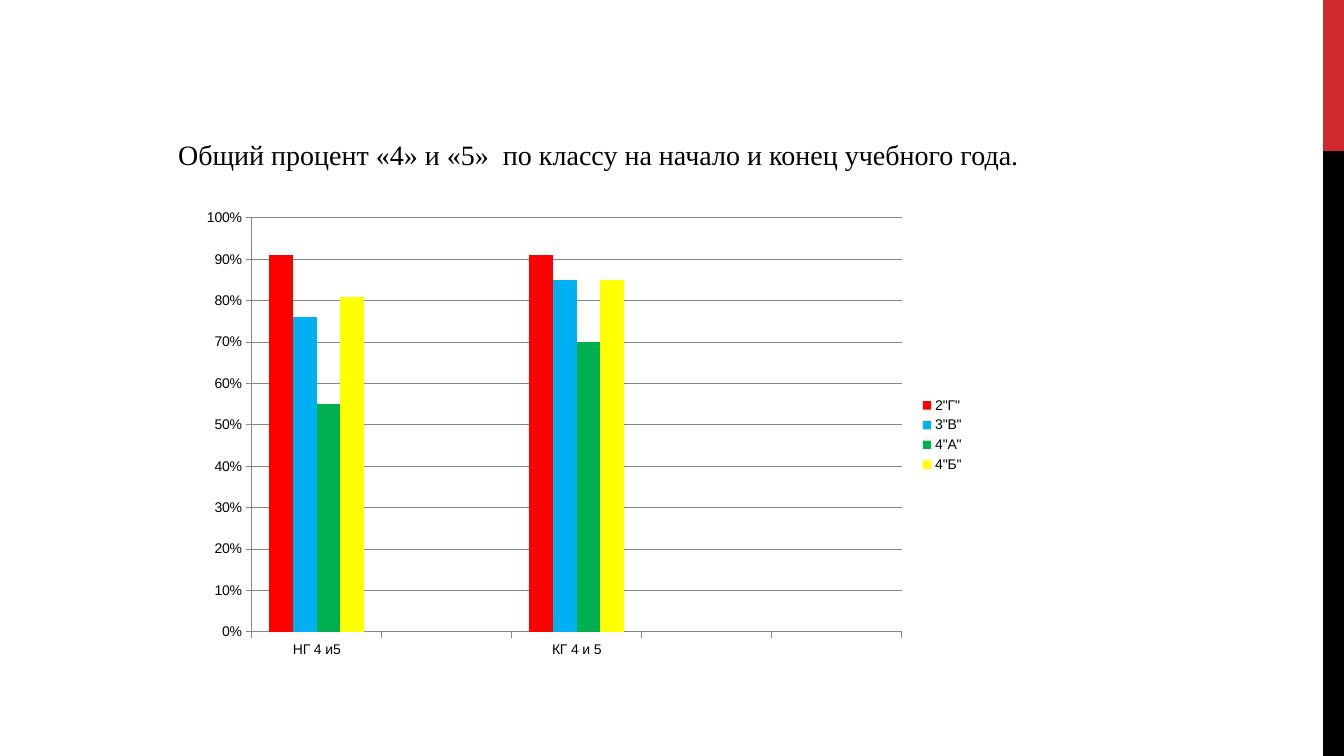
from lxml.etree import SubElement
from pptx import Presentation
from pptx.chart.data import CategoryChartData
from pptx.dml.color import RGBColor
from pptx.enum.chart import XL_CHART_TYPE as ChartType, XL_LEGEND_POSITION as LegendSide
from pptx.enum.chart import XL_TICK_MARK as Tick
from pptx.enum.shapes import MSO_SHAPE as Preset
from pptx.enum.text import MSO_ANCHOR as Anchor, MSO_AUTO_SIZE as AutoSize, PP_ALIGN as Align
from pptx.oxml.ns import qn
from pptx.util import Pt

# Content
HEADING = "Общий процент «4» и «5»  по классу на начало и конец учебного года."
PERIODS = ["НГ 4 и5", "", "КГ 4 и 5", "", ""]
CLASSES = [  # name, shares per period, colour
    ('2"Г"', (0.91, None, 0.91, None, None), "FF0000"),
    ('3"В"', (0.76, None, 0.85, None, None), "00B0F0"),
    ('4"А"', (0.55, None, 0.70, None, None), "00B050"),
    ('4"Б"', (0.81, None, 0.85, None, None), "FFFF00"),
]

THEME = {
    "ink": "000000", "accent": "D1282E", "rule": "868686",
    "heading_font": "Times New Roman", "heading_size": 20,
    "chart_font": "Arial", "chart_size": 10,
}

# Layout in points
WIDTH, HEIGHT = 960, 540
STRIPE_WIDTH, ACCENT_HEIGHT = 15, 108
BODY_BOX = (48, 94.5, 800, 388)
CHART_BOX = (136.8, 144, 559.4, 333.4)
PLOT_SHARE = {"x": 0.077, "y": 0.035, "w": 0.83, "h": 0.887}


def points(*lengths):
    return [Pt(length) for length in lengths]


def apply(target, values):
    for name, value in values.items():
        setattr(target, name, value)


def paint(fill, colour):
    fill.solid()
    fill.fore_color.rgb = RGBColor.from_string(colour)


def style_font(font, kind):
    apply(font, {"name": THEME[kind + "_font"], "size": Pt(THEME[kind + "_size"]),
                 "bold": False})
    font.color.rgb = RGBColor.from_string(THEME["ink"])


def style_line(line):
    line.color.rgb = RGBColor.from_string(THEME["rule"])
    line.width = Pt(0.75)


def add_stripe(slide, top, height, colour):
    stripe = slide.shapes.add_shape(
        Preset.RECTANGLE, *points(WIDTH - STRIPE_WIDTH, top, STRIPE_WIDTH, height))
    stripe.shadow.inherit = False
    paint(stripe.fill, colour)
    stripe.line.fill.background()


def fill_body(body):
    apply(body, dict(zip(("left", "top", "width", "height"), points(*BODY_BOX))))
    apply(body.text_frame, {"text": HEADING, "word_wrap": True,
                            "vertical_anchor": Anchor.TOP, "auto_size": AutoSize.NONE})
    heading = body.text_frame.paragraphs[0]
    apply(heading, {"alignment": Align.JUSTIFY, "space_before": Pt(4), "space_after": Pt(6)})
    style_font(heading.runs[0].font, "heading")
    # First-line indent without a bullet
    props = heading._p.get_or_add_pPr()
    props.set("marL", "0")
    props.set("indent", str(Pt(72)))
    SubElement(props, qn("a:buNone"))


def add_grades_chart(slide):
    grades = CategoryChartData(number_format="0%")
    grades.categories = PERIODS
    for name, shares, _ in CLASSES:
        grades.add_series(name, shares)
    chart = slide.shapes.add_chart(
        ChartType.COLUMN_CLUSTERED, *points(*CHART_BOX), grades).chart
    apply(chart, {"has_title": False, "has_legend": True})
    style_font(chart.font, "chart")
    apply(chart.legend, {"position": LegendSide.RIGHT, "include_in_layout": False})

    # Columns
    plot = chart.plots[0]
    apply(plot, {"gap_width": 150, "overlap": 0, "vary_by_categories": False})
    for series, (_, _, colour) in zip(plot.series, CLASSES):
        paint(series.format.fill, colour)
        series.invert_if_negative = False

    # Axes
    for axis in (chart.category_axis, chart.value_axis):
        apply(axis, {"major_tick_mark": Tick.OUTSIDE, "minor_tick_mark": Tick.NONE})
        style_line(axis.format.line)
    apply(chart.value_axis, {"minimum_scale": 0, "maximum_scale": 1, "major_unit": 0.1,
                             "has_major_gridlines": True})
    style_line(chart.value_axis.major_gridlines.format.line)
    apply(chart.value_axis.tick_labels, {"number_format": "0%",
                                         "number_format_is_linked": False})

    # Fixed plot area inside the chart
    area = chart._chartSpace.chart.plotArea
    for old in area.findall(qn("c:layout")):
        area.remove(old)
    layout = SubElement(area, qn("c:layout"))
    area.insert(0, layout)
    manual = SubElement(layout, qn("c:manualLayout"))
    settings = {"layoutTarget": "inner", "xMode": "edge", "yMode": "edge", **PLOT_SHARE}
    for tag, value in settings.items():
        SubElement(manual, qn("c:" + tag)).set("val", str(value))


def main():
    deck = Presentation()
    apply(deck, {"slide_width": Pt(WIDTH), "slide_height": Pt(HEIGHT)})
    slide = deck.slides.add_slide(deck.slide_layouts[1])
    paint(slide.background.fill, "FFFFFF")

    # The heading sits in the body, so the title is not needed
    title = slide.shapes.title._element
    title.getparent().remove(title)
    fill_body(slide.placeholders[1])

    # Side stripe
    add_stripe(slide, 0, ACCENT_HEIGHT, THEME["accent"])
    add_stripe(slide, ACCENT_HEIGHT, HEIGHT - ACCENT_HEIGHT, THEME["ink"])

    add_grades_chart(slide)
    deck.save("out.pptx")


if __name__ == "__main__":
    main()
